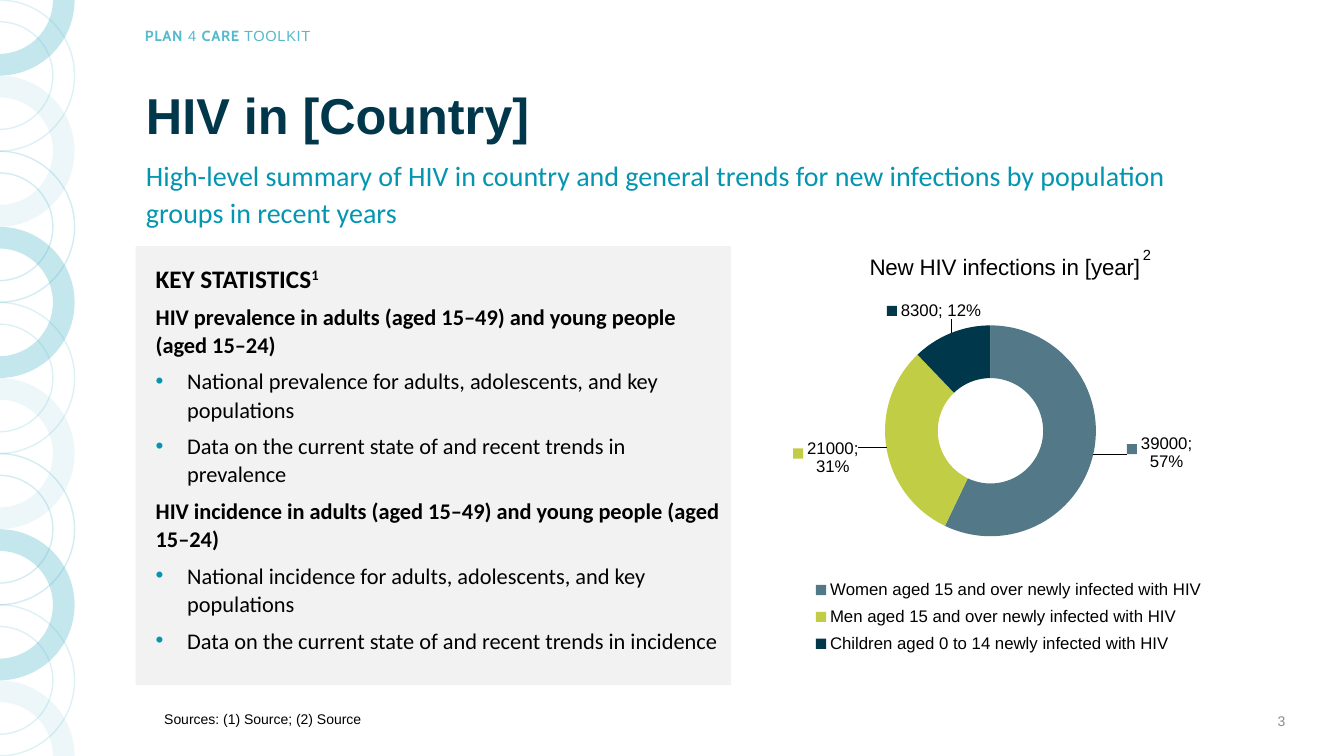
from copy import deepcopy
from math import cos, radians, sin

from lxml import etree
from pptx import Presentation
from pptx.chart.data import CategoryChartData
from pptx.dml.color import RGBColor
from pptx.enum.chart import XL_CHART_TYPE, XL_LEGEND_POSITION
from pptx.enum.shapes import MSO_SHAPE
from pptx.enum.text import MSO_ANCHOR, PP_ALIGN
from pptx.oxml import parse_xml
from pptx.oxml.ns import nsdecls, qn
from pptx.util import Pt

DOUGHNUT = XL_CHART_TYPE.DOUGHNUT
LEGEND_RIGHT = XL_LEGEND_POSITION.RIGHT
RECTANGLE = MSO_SHAPE.RECTANGLE
TOP, MIDDLE = MSO_ANCHOR.TOP, MSO_ANCHOR.MIDDLE
LEFT, RIGHT = PP_ALIGN.LEFT, PP_ALIGN.RIGHT

THEME = {
    "ring": "56B9CC", "navy": "00374B", "teal": "0495B0", "panel": "F2F2F2",
    "black": "000000", "grey": "8C8C8C", "women": "537887", "men": "C2CD46",
    "title": 36, "subtitle": 20, "heading": 18, "body": 16, "chart_title": 16,
    "chart": 12, "brand": 10.5, "note": 10,
    "sans": "Arial", "text": "Calibri", "display": "Cabin",
}


def rgb(name):
    return RGBColor.from_string(THEME[name])


def write(frame, runs, size, color, paragraph_format=None, first=True, **frame_format):
    """Write one paragraph; runs are (text, font, bold) triples."""
    for key, value in frame_format.items():
        setattr(frame, key, value)
    paragraph = frame.paragraphs[0] if first else frame.add_paragraph()
    for key, value in (paragraph_format or {}).items():
        setattr(paragraph, key, value)
    for text, font, bold in runs:
        run = paragraph.add_run()
        run.text = text
        font_format = {"name": THEME[font], "size": Pt(THEME[size]), "bold": bold}
        for key, value in font_format.items():
            setattr(run.font, key, value)
        run.font.color.rgb = rgb(color)
    return paragraph


prs = Presentation()
prs.slide_width, prs.slide_height = Pt(960), Pt(540)
slide = prs.slides.add_slide(prs.slide_layouts[6])
shapes = slide.shapes

# Half rings down the left edge: (filled, opacity in percent), repeating
RING_STYLES = [(True, 35), (False, 20), (True, 10), (False, 25)]
RING_STEP, OUTER, INNER, RING_X, LAST_RING = 54, 54, 38.5, -0.7, 10
for index in range(LAST_RING + 1):
    filled, opacity = RING_STYLES[index % len(RING_STYLES)]
    start = 0 if index == 0 else -90
    end = 0 if index == LAST_RING else 90
    angles = range(start, end + 1, 90)
    edge = [(OUTER, a) for a in angles] + [(INNER, a) for a in reversed(angles)]
    points = [(Pt(RING_X + r * cos(radians(a))),
               Pt(index * RING_STEP + r * sin(radians(a)))) for r, a in edge]
    outline = shapes.build_freeform(*points[0])
    outline.add_line_segments(points[1:], close=True)
    ring = outline.convert_to_shape()
    # Round each side that stays on one radius
    sides = list(ring._element.spPr.iter(qn("a:lnTo")))
    for side, (radius, angle), (next_radius, next_angle) in zip(sides, edge, edge[1:]):
        if radius == next_radius:
            arc = etree.Element(
                qn("a:arcTo"), wR=str(Pt(radius)), hR=str(Pt(radius)),
                stAng=str(angle % 360 * 60000), swAng=str((next_angle - angle) * 60000))
            side.getparent().replace(side, arc)
    ring.shadow.inherit = False
    if filled:
        ring.fill.solid()
        ring.fill.fore_color.rgb = rgb("ring")
        ring.line.fill.background()
    else:
        ring.fill.background()
        ring.line.color.rgb = rgb("ring")
        ring.line.width = Pt(1)
    for tint in ring._element.spPr.iter(qn("a:srgbClr")):
        etree.SubElement(tint, qn("a:alpha"), val=str(opacity * 1000))

# Toolkit name, title, subtitle, sources and slide number
toolkit = shapes.add_textbox(Pt(96.5), Pt(15.8), Pt(132.5), Pt(20))
toolkit_line = write(
    toolkit.text_frame,
    [("PLAN", "display", True), (" 4 ", "sans", False),
     ("CARE ", "display", True), ("TOOLKIT", "sans", False)],
    "brand", "ring", word_wrap=False)
for run in toolkit_line.runs:
    run.font._element.set("spc", "50")

LABELS = [
    ("HIV in [Country]", (97.2, 64, 797, 40.3), "sans", True, "title", "navy",
     MIDDLE, {"line_spacing": 0.9}),
    ("High-level summary of HIV in country and general trends for new infections "
     "by population groups in recent years", (97.2, 107.3, 797, 37.4), "text", False,
     "subtitle", "teal", TOP, {"line_spacing": 1.1, "space_before": Pt(12)}),
    ("3", (709.2, 500.4, 216, 28.8), "sans", False, "note", "grey",
     MIDDLE, {"alignment": RIGHT}),
    ("Sources: (1) Source; (2) Source", (110.2, 504, 617.8, 25.2), "sans", False,
     "note", "black", TOP, {"alignment": LEFT}),
]
for text, box, font, bold, size, color, anchor, paragraph_format in LABELS:
    label = shapes.add_textbox(*map(Pt, box))
    write(label.text_frame, [(text, font, bold)], size, color, paragraph_format,
          word_wrap=True, vertical_anchor=anchor)

# Key statistics panel
panel = shapes.add_shape(RECTANGLE, Pt(96.8), Pt(175.9), Pt(425.5), Pt(313.6))
panel.shadow.inherit = False
panel.fill.solid()
panel.fill.fore_color.rgb = rgb("panel")
panel.line.fill.background()
PANEL_LINE = {"line_spacing": 1.05, "space_before": Pt(6), "alignment": LEFT}
heading = write(
    panel.text_frame, [("KEY STATISTICS", "text", True), ("1", "text", True)],
    "heading", "black", PANEL_LINE, word_wrap=True, vertical_anchor=TOP,
    margin_left=Pt(14.4), margin_top=Pt(10.8), margin_right=Pt(7.2),
    margin_bottom=Pt(3.6))
heading.runs[1].font._element.set("baseline", "30000")

STATISTICS = {
    "HIV prevalence in adults (aged 15–49) and young people (aged 15–24)": [
        "National prevalence for adults, adolescents, and key populations",
        "Data on the current state of and recent trends in prevalence"],
    "HIV incidence in adults (aged 15–49) and young people (aged 15–24)": [
        "National incidence for adults, adolescents, and key populations",
        "Data on the current state of and recent trends in incidence"],
}
for topic, details in STATISTICS.items():
    write(panel.text_frame, [(topic, "text", True)], "body", "black", PANEL_LINE, False)
    for detail in details:
        bullet = write(panel.text_frame, [(detail, "text", False)], "body", "black",
                       PANEL_LINE, False)
        properties = bullet._p.get_or_add_pPr()
        properties.set("marL", str(Pt(22.5)))
        properties.set("indent", str(Pt(-22.5)))
        bullet_color = etree.SubElement(properties, qn("a:buClr"))
        etree.SubElement(bullet_color, qn("a:srgbClr"), val=THEME["teal"])
        etree.SubElement(properties, qn("a:buFont"), typeface=THEME["sans"])
        etree.SubElement(properties, qn("a:buChar"), char="•")

# Doughnut: (category, value, colour, label offset as a share of the chart)
INFECTIONS = [
    ("Women aged 15 and over newly infected with HIV", 39000, "women", (0.17, 0.01)),
    ("Men aged 15 and over newly infected with HIV", 21000, "men", (-0.16, 0.03)),
    ("Children aged 0 to 14 newly infected with HIV", 8300, "navy", (-0.05, -0.1)),
]
data = CategoryChartData()
data.categories = [category for category, *_ in INFECTIONS]
data.add_series("Series 1", [value for _, value, *_ in INFECTIONS])
chart = shapes.add_chart(DOUGHNUT, Pt(517.7), Pt(152.6), Pt(386.6), Pt(337), data).chart
chart.has_title = True
write(chart.chart_title.text_frame, [("New HIV infections in [year]", "sans", False)],
      "chart_title", "black")
chart.has_legend = True
chart.legend.position = LEGEND_RIGHT
chart.legend.include_in_layout = False
infections = chart.plots[0].series[0]
labels = infections.data_labels
for key in ("show_value", "show_percentage", "show_legend_key"):
    setattr(labels, key, True)
for font in (chart.font, chart.legend.font, labels.font):
    font.name, font.size = THEME["sans"], Pt(THEME["chart"])
    font.color.rgb = rgb("black")

# Chart layout: plot, title and legend as shares of the chart
PLOT_AREA = chart._chartSpace.chart.plotArea
LAYOUTS = [
    (PLOT_AREA, 0, {"x": 0.296, "y": 0.237, "w": 0.39, "h": 0.447}),
    (chart.chart_title._element, 1, {"x": 0.26, "y": 0.075}),
    (chart.legend._element, 1, {"x": 0.15, "y": 0.76, "w": 0.75, "h": 0.19}),
]
LAYOUT_XML = "<c:layout %s><c:manualLayout>%s</c:manualLayout></c:layout>"
for part, position, place in LAYOUTS:
    for automatic in part.findall(qn("c:layout")):
        part.remove(automatic)
    target = '<c:layoutTarget val="inner"/>' if part is PLOT_AREA else ""
    edges = "".join(f'<c:{k}Mode val="edge"/>' for k in "xy")
    values = "".join(f'<c:{k} val="{v}"/>' for k, v in place.items())
    part.insert(position, parse_xml(LAYOUT_XML % (nsdecls("c"), target + edges + values)))

# Slice colours and labels pulled outside the ring
label_set = labels._element
separator = etree.Element(qn("c:separator"))
separator.text = "; "
label_set.find(qn("c:showBubbleSize")).addnext(separator)
shared = [c for c in label_set if c.tag != qn("c:showLeaderLines")]
for index, (_, _, color, (dx, dy)) in enumerate(INFECTIONS):
    slice_fill = infections.points[index].format.fill
    slice_fill.solid()
    slice_fill.fore_color.rgb = rgb(color)
    slice_label = etree.Element(qn("c:dLbl"))
    etree.SubElement(slice_label, qn("c:idx"), val=str(index))
    offset = f'<c:x val="{dx}"/><c:y val="{dy}"/>'
    slice_label.append(parse_xml(LAYOUT_XML % (nsdecls("c"), offset)))
    slice_label.extend(deepcopy(shared))
    label_set.insert(index, slice_label)

# Source mark beside the chart title
source_mark = shapes.add_textbox(Pt(809.3), Pt(172), Pt(16.6), Pt(20.9))
write(source_mark.text_frame, [("2", "sans", False)], "brand", "black", word_wrap=False)

prs.save("out.pptx")
